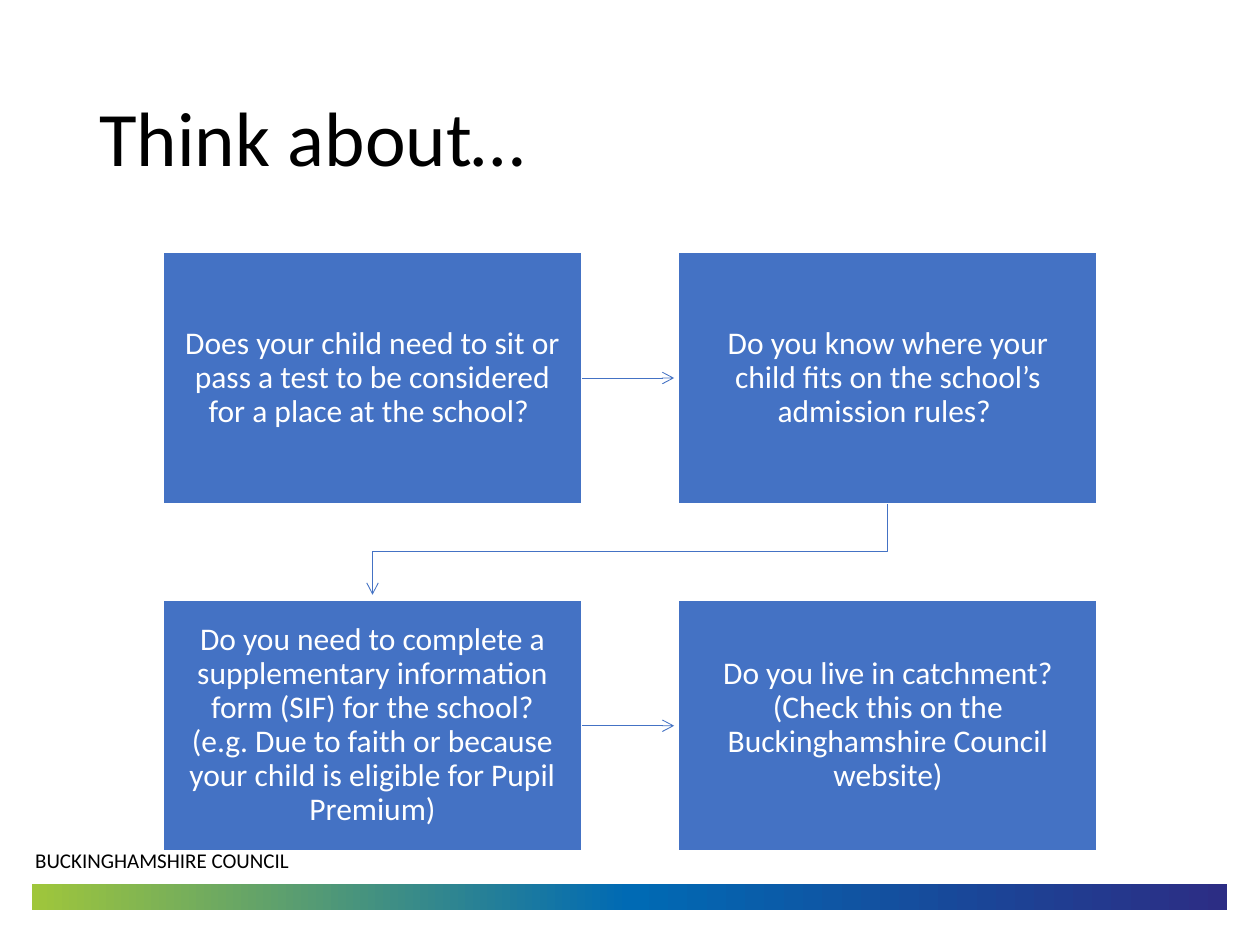
from copy import deepcopy
from dataclasses import dataclass

from lxml import etree
from pptx import Presentation
from pptx.dml.color import RGBColor
from pptx.enum.shapes import MSO_CONNECTOR, MSO_SHAPE
from pptx.enum.text import MSO_ANCHOR, MSO_AUTO_SIZE, PP_ALIGN
from pptx.oxml.ns import qn
from pptx.util import Cm, Pt

RECT, STRAIGHT = MSO_SHAPE.RECTANGLE, MSO_CONNECTOR.STRAIGHT
LEFT, CENTER = PP_ALIGN.LEFT, PP_ALIGN.CENTER
TOP, MIDDLE = MSO_ANCHOR.TOP, MSO_ANCHOR.MIDDLE
NO_FIT = MSO_AUTO_SIZE.NONE
TITLE_ONLY = 5

COLORS = {"box": "4472C4", "white": "FFFFFF", "text": "000000",
          "green": "9FC63B", "blue": "006AB4", "indigo": "2C2D84"}
FONT = "Calibri"

# Box grid, in centimetres
GRID_X, GRID_Y = 3.28, 5.08
BOX_W, BOX_H = 8.46, 5.08
STEP_X, STEP_Y = 10.39, 7.01
ARROW_LEN = 1.85


@dataclass
class Question:
    col: int
    row: int
    text: str

    @property
    def x(self) -> float:
        return GRID_X + self.col * STEP_X

    @property
    def y(self) -> float:
        return GRID_Y + self.row * STEP_Y


QUESTIONS = [
    Question(0, 0, "Does your child need to sit or pass a test to be "
                   "considered for a place at the school? "),
    Question(1, 0, "Do you know where your child fits on the school’s "
                   "admission rules? "),
    Question(0, 1, "Do you need to complete a supplementary information form "
                   "(SIF) for the school? (e.g. Due to faith or because your "
                   "child is eligible for Pupil Premium)"),
    Question(1, 1, "Do you live in catchment? (Check this on the "
                   "Buckinghamshire Council website)"),
]


def rgb(name: str) -> RGBColor:
    return RGBColor.from_string(COLORS[name])


def write(shape, text: str, size: int, color: str, align, anchor,
          spacing: float = 1.0, **frame_format) -> None:
    tf = shape.text_frame
    frame = {"word_wrap": True, "auto_size": NO_FIT,
             "vertical_anchor": anchor, **frame_format}
    for name, value in frame.items():
        setattr(tf, name, value)
    p = tf.paragraphs[0]
    p.alignment, p.line_spacing = align, spacing
    r = p.add_run()
    r.text = text
    for name, value in {"name": FONT, "size": Pt(size)}.items():
        setattr(r.font, name, value)
    r.font.color.rgb = rgb(color)


def draw_box(slide, q: Question) -> None:
    sp = slide.shapes.add_shape(RECT, Cm(q.x), Cm(q.y), Cm(BOX_W), Cm(BOX_H))
    sp.shadow.inherit = False
    sp.fill.solid()
    sp.fill.fore_color.rgb = rgb("box")
    sp.line.color.rgb = rgb("white")
    sp.line.width = Pt(1.5)
    write(sp, q.text, 18, "white", CENTER, MIDDLE, 0.9,
          margin_left=Cm(0.41), margin_right=Cm(0.41),
          margin_top=Cm(0.43), margin_bottom=Cm(0.43))


def style_arrow(shape) -> None:
    shape.line.color.rgb = rgb("box")
    shape.line.width = Pt(0.5)
    sp_pr = shape._element.spPr
    etree.SubElement(sp_pr.find(qn("a:ln")), qn("a:tailEnd"), type="arrow")
    etree.SubElement(sp_pr, qn("a:effectLst"))


def draw_row_arrow(slide, q: Question) -> None:
    x, y = q.x + BOX_W, q.y + BOX_H / 2
    style_arrow(slide.shapes.add_connector(
        STRAIGHT, Cm(x), Cm(y), Cm(x + ARROW_LEN), Cm(y)))


def draw_elbow_arrow(slide, start: Question, end: Question) -> None:
    x1, x2 = start.x + BOX_W / 2, end.x + BOX_W / 2
    y1, y2 = start.y + BOX_H, end.y - 0.1
    bend = (start.y + BOX_H + end.y) / 2
    points = [(Cm(x), Cm(y)) for x, y in ((x1, bend), (x2, bend), (x2, y2))]
    builder = slide.shapes.build_freeform(Cm(x1), Cm(y1))
    builder.add_line_segments(points, close=False)
    sp = builder.convert_to_shape()
    sp.fill.background()
    style_arrow(sp)


def draw_gradient_bar(slide) -> None:
    sp = slide.shapes.add_shape(RECT, Cm(0.64), Cm(17.83), Cm(24.1), Cm(0.51))
    sp.shadow.inherit = False
    sp.line.fill.background()
    sp.fill.gradient()
    sp.fill.gradient_angle = 0
    stops = sp._element.spPr.find(".//" + qn("a:gsLst"))
    stops.insert(1, deepcopy(stops[0]))
    for i, (stop, name) in enumerate(
            zip(sp.fill.gradient_stops, ("green", "blue", "indigo"))):
        stop.position = i / 2
        stop.color.rgb = rgb(name)


def main() -> None:
    prs = Presentation()
    prs.slide_width, prs.slide_height = Cm(25.4), Cm(19.05)
    s = prs.slides.add_slide(prs.slide_layouts[TITLE_ONLY])

    # Footer
    draw_gradient_bar(s)
    footer = s.shapes.add_textbox(Cm(0.46), Cm(16.97), Cm(12.22), Cm(0.76))
    write(footer, "BUCKINGHAMSHIRE COUNCIL", 12, "text", LEFT, TOP)

    # Title
    title = s.shapes.title
    place = {"left": Cm(1.75), "top": Cm(1.02),
             "width": Cm(21.9), "height": Cm(3.68)}
    for name, value in place.items():
        setattr(title, name, value)
    write(title, "Think about…", 44, "text", LEFT, MIDDLE, 0.9)

    # Flow of questions
    for q in QUESTIONS:
        draw_box(s, q)
        if q.col == 0:
            draw_row_arrow(s, q)
    draw_elbow_arrow(s, QUESTIONS[1], QUESTIONS[2])

    prs.save("out.pptx")


if __name__ == "__main__":
    main()
